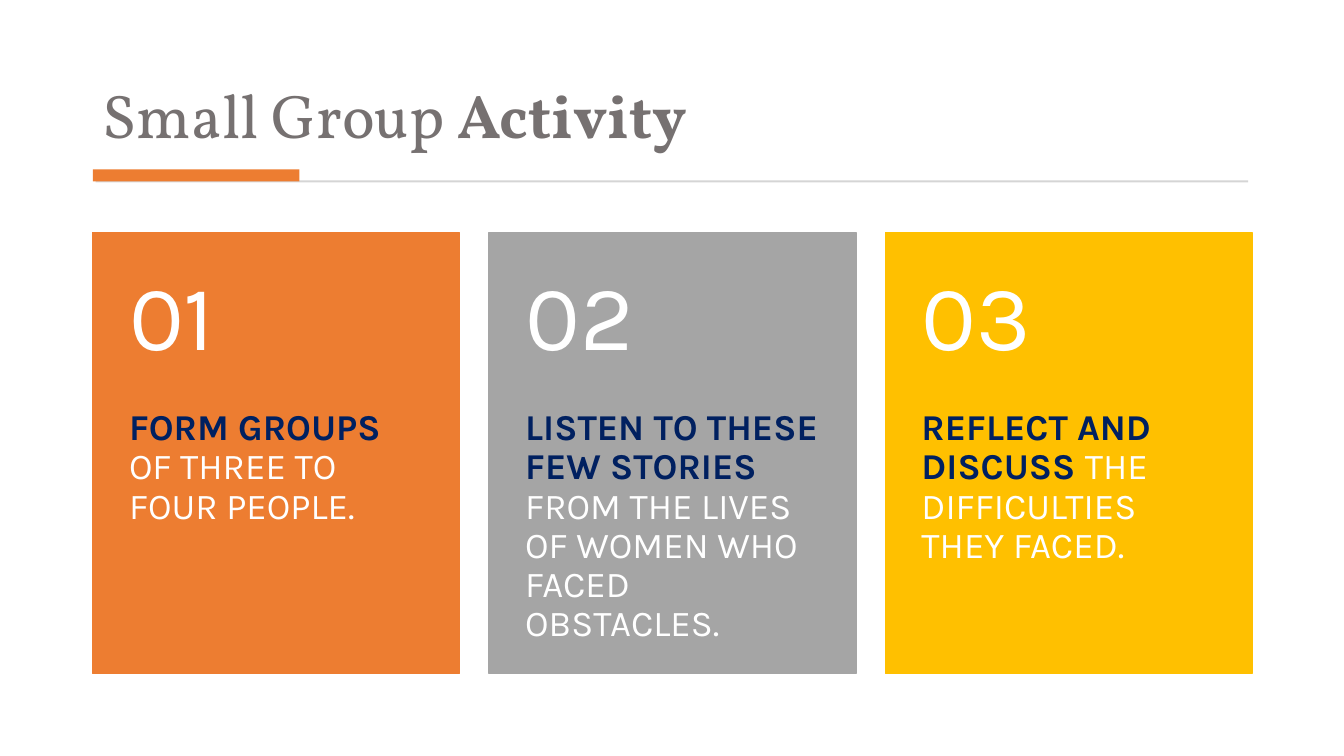
from dataclasses import dataclass

from pptx import Presentation
from pptx.dml.color import RGBColor
from pptx.enum.shapes import MSO_SHAPE as Shape
from pptx.enum.text import MSO_ANCHOR as Anchor, MSO_AUTO_SIZE as AutoSize, PP_ALIGN as Align
from pptx.util import Inches, Pt

ORANGE = RGBColor(0xED, 0x7D, 0x31)
GRAY = RGBColor(0xA5, 0xA5, 0xA5)
GOLD = RGBColor(0xFF, 0xC0, 0x00)
NAVY = RGBColor(0x00, 0x20, 0x60)
WHITE = RGBColor(0xFF, 0xFF, 0xFF)
TITLE_GRAY = RGBColor(0x76, 0x71, 0x71)
RULE_GRAY = RGBColor(0xD5, 0xD5, 0xD5)

LEFT = 0.92
CARD_TOP, CARD_WIDTH, CARD_HEIGHT = 2.31, 3.64, 4.37
COLUMN_STEP = 3.93
NUMBER_HEIGHT = 0.4 * CARD_HEIGHT
SIDE_INSET = 0.36


@dataclass(frozen=True)
class Run:
    text: str
    size: int
    color: RGBColor
    bold: bool = False
    font: str = "Karla"


@dataclass(frozen=True)
class Step:
    color: RGBColor
    action: str
    detail: str


STEPS = [
    Step(ORANGE, "FORM GROUPS ", "OF THREE TO FOUR PEOPLE."),
    Step(GRAY, "LISTEN TO THESE FEW STORIES ", "FROM THE LIVES OF WOMEN WHO FACED OBSTACLES."),
    Step(GOLD, "REFLECT AND DISCUSS ", "THE DIFFICULTIES THEY FACED."),
]
TITLE = [
    Run("Small Group ", 44, TITLE_GRAY, font="Vollkorn"),
    Run("Activity", 44, TITLE_GRAY, True, "Vollkorn"),
]


def write_runs(text_frame, runs: list[Run], anchor: Anchor) -> None:
    frame_format = {"word_wrap": True, "auto_size": AutoSize.NONE, "vertical_anchor": anchor}
    for name, value in frame_format.items():
        setattr(text_frame, name, value)
    paragraph = text_frame.paragraphs[0]
    paragraph.alignment = Align.LEFT
    paragraph.line_spacing = 0.9
    for item in runs:
        run = paragraph.add_run()
        run.text = item.text
        font_format = {"name": item.font, "size": Pt(item.size), "bold": item.bold}
        for name, value in font_format.items():
            setattr(run.font, name, value)
        run.font.color.rgb = item.color


def add_block(shapes, left: float, top: float, width: float, height: float,
              color: RGBColor, outlined: bool = False) -> None:
    block = shapes.add_shape(Shape.RECTANGLE, Inches(left), Inches(top), Inches(width), Inches(height))
    block.shadow.inherit = False
    block.fill.solid()
    block.fill.fore_color.rgb = color
    if outlined:
        block.line.color.rgb = color
        block.line.width = Pt(1)
    else:
        block.line.fill.background()


def add_card_text(shapes, left: float, top: float, height: float, runs: list[Run],
                  anchor: Anchor, top_inset: float, bottom_inset: float) -> None:
    box = shapes.add_textbox(Inches(left), Inches(top), Inches(CARD_WIDTH), Inches(height))
    insets = {"margin_left": SIDE_INSET, "margin_right": SIDE_INSET,
              "margin_top": top_inset, "margin_bottom": bottom_inset}
    for name, value in insets.items():
        setattr(box.text_frame, name, Inches(value))
    write_runs(box.text_frame, runs, anchor)


def add_card(slide, index: int, step: Step) -> None:
    shapes = slide.shapes.add_group_shape().shapes
    left = LEFT + index * COLUMN_STEP
    add_block(shapes, left, CARD_TOP, CARD_WIDTH, CARD_HEIGHT, step.color, outlined=True)
    add_card_text(shapes, left, CARD_TOP + NUMBER_HEIGHT, CARD_HEIGHT - NUMBER_HEIGHT,
                  [Run(step.action, 26, NAVY, True), Run(step.detail, 26, WHITE)],
                  Anchor.TOP, 0, SIDE_INSET)
    add_card_text(shapes, left, CARD_TOP, NUMBER_HEIGHT,
                  [Run(f"{index + 1:02}", 66, WHITE)], Anchor.MIDDLE, 0.18, 0.18)


def main() -> None:
    presentation = Presentation()
    presentation.slide_width, presentation.slide_height = Inches(13.33), Inches(7.5)
    slide = presentation.slides.add_slide(presentation.slide_layouts[5])
    title = slide.shapes.title
    position = {"left": LEFT, "top": 0.45, "width": 11.49, "height": 1.11}
    for name, value in position.items():
        setattr(title, name, Inches(value))
    write_runs(title.text_frame, TITLE, Anchor.BOTTOM)
    add_block(slide.shapes, 0.95, 1.79, 11.43, 0.02, RULE_GRAY)
    add_block(slide.shapes, LEFT, 1.68, 2.05, 0.12, ORANGE)
    for index, step in enumerate(STEPS):
        add_card(slide, index, step)
    presentation.save("out.pptx")


if __name__ == "__main__":
    main()
